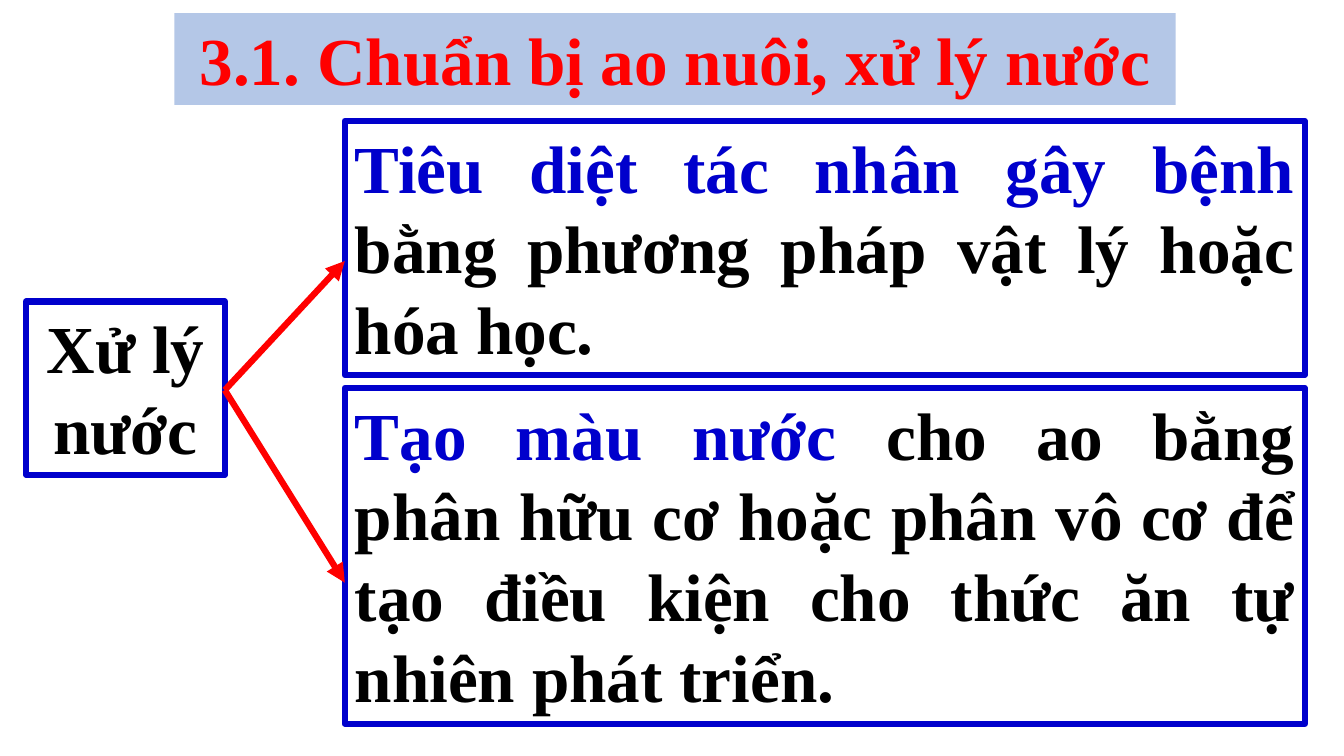
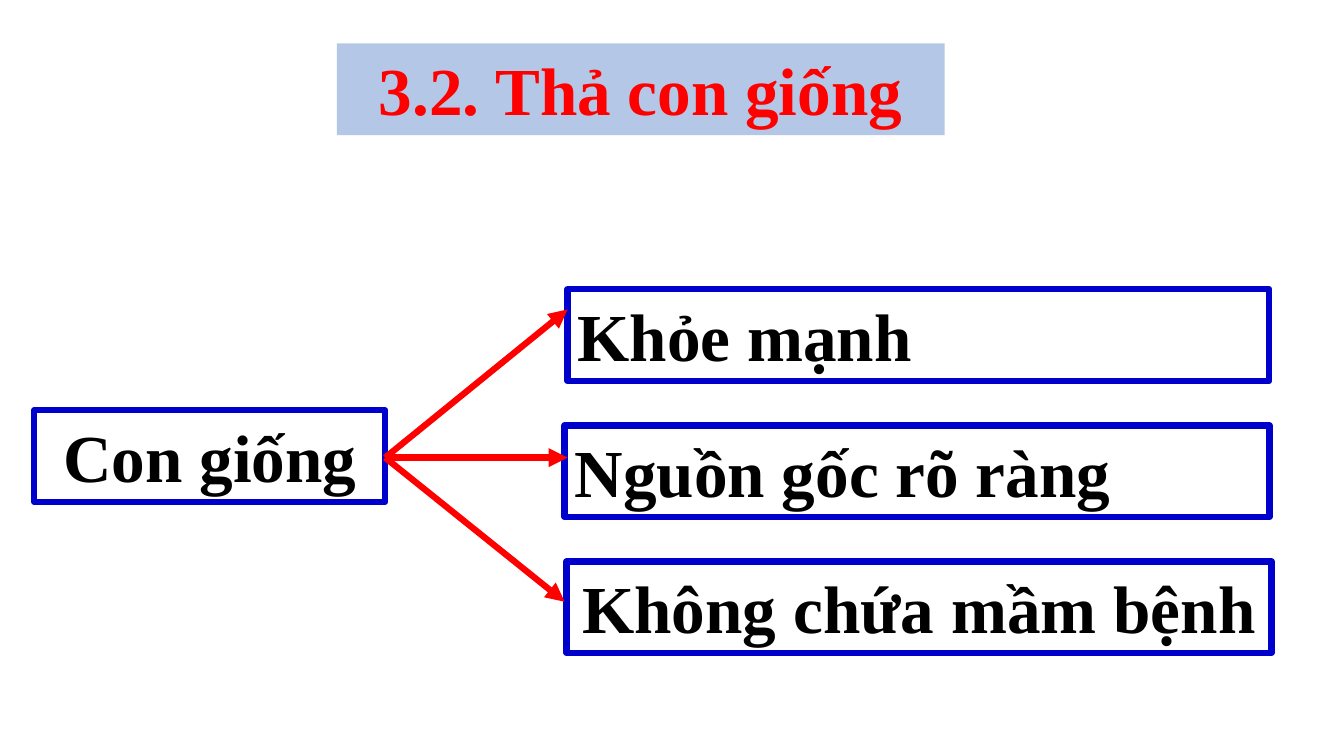
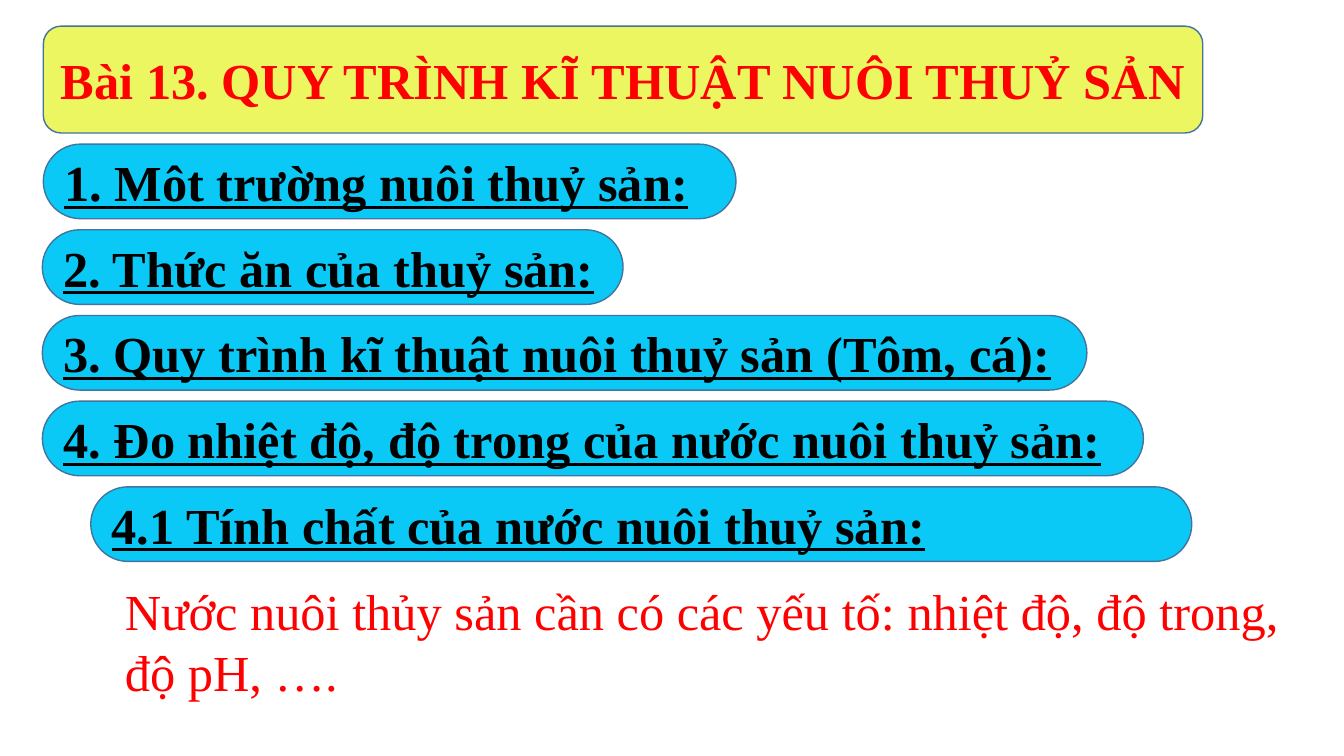
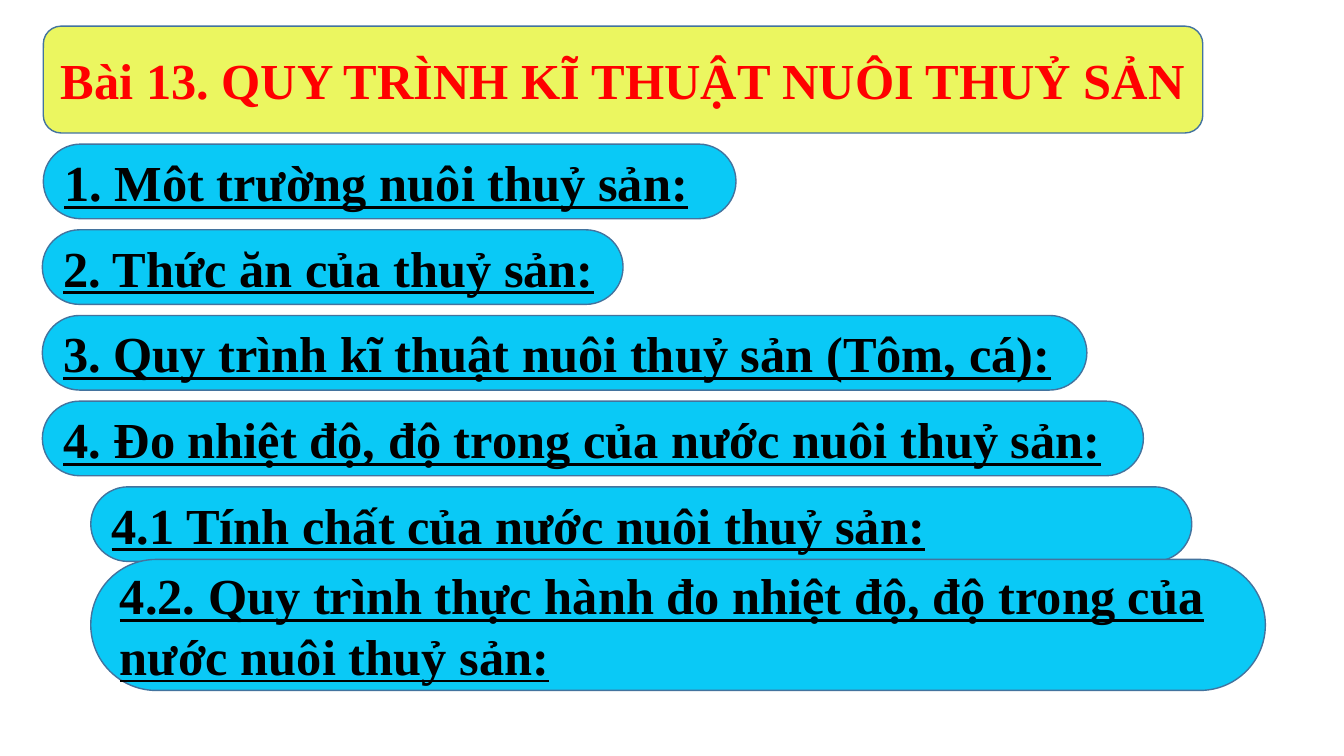
import pptx
import pptx.dml.color
import pptx.enum.shapes
import pptx.enum.text
import pptx.oxml
import pptx.oxml.ns
import pptx.util
from dataclasses import dataclass

Inches = pptx.util.Inches
Pt = pptx.util.Pt
ALIGN = pptx.enum.text.PP_ALIGN
ANCHOR = pptx.enum.text.MSO_ANCHOR
AUTO_SIZE = pptx.enum.text.MSO_AUTO_SIZE
SHAPE = pptx.enum.shapes.MSO_SHAPE


@dataclass(frozen=True)
class Theme:
    font: str = "Times New Roman"
    large: int = 48
    medium: int = 36
    box_line: float = 4.5
    thin_line: float = 1
    red: str = "FF0000"
    black: str = "000000"
    blue: str = "0000CC"
    title_fill: str = "B4C7E7"
    lesson_fill: str = "EBF660"
    chip_fill: str = "0AC9F6"
    chip_line: str = "43739E"


THEME = Theme()

# Lesson outline: text, left, width
LESSON_TITLE = "Bài 13. QUY TRÌNH KĨ THUẬT NUÔI THUỶ SẢN"
OUTLINE = [
    ("1. Môt trường nuôi thuỷ sản:", 0.43, 6.87),
    ("2. Thức ăn của thuỷ sản:", 0.42, 5.76),
    ("3. Quy trình kĩ thuật nuôi thuỷ sản (Tôm, cá):", 0.42, 10.36),
    ("4. Đo nhiệt độ, độ trong của nước nuôi thuỷ sản:", 0.42, 10.92),
    ("4.1 Tính chất của nước nuôi thuỷ sản:", 0.9, 10.92),
]
OUTLINE_TOP, OUTLINE_PITCH, CHIP_HEIGHT = 1.43, 0.85, 0.74
BOX_HEIGHT = 0.91


# Shared helpers
def rgb(value):
    return pptx.dml.color.RGBColor.from_string(value)


def apply_format(target, values):
    for name, value in values.items():
        setattr(target, name, value)


def set_fill(shape, color):
    if color is None:
        shape.fill.background()
    else:
        shape.fill.solid()
        shape.fill.fore_color.rgb = rgb(color)


def set_line(line, color, width):
    line.color.rgb = rgb(color)
    line.width = Pt(width)


def write_text(shape, runs, size, align=ALIGN.LEFT, anchor=ANCHOR.TOP,
               grow=True, bold=True, underline=False):
    """Fill a shape with one paragraph of (text, color) runs."""
    frame = shape.text_frame
    apply_format(frame, {
        "word_wrap": True,
        "vertical_anchor": anchor,
        "auto_size": AUTO_SIZE.SHAPE_TO_FIT_TEXT if grow else AUTO_SIZE.NONE,
    })
    paragraph = frame.paragraphs[0]
    paragraph.alignment = align
    for text, color in runs:
        run = paragraph.add_run()
        run.text = text
        apply_format(run.font, {"name": THEME.font, "size": Pt(size),
                                "bold": bold, "underline": underline})
        run.font.color.rgb = rgb(color)


# Kinds of element
def add_slide(presentation):
    return presentation.slides.add_slide(presentation.slide_layouts[5])


def add_title(slide, text, place, size, fill=None, **text_format):
    title = slide.shapes.title
    names = ("left", "top", "width", "height")
    apply_format(title, dict(zip(names, map(Inches, place))))
    set_fill(title, fill)
    write_text(title, [(text, THEME.red)], size, ALIGN.CENTER, **text_format)


def add_panel(slide, kind, place, fill, line, width):
    shape = slide.shapes.add_shape(kind, *map(Inches, place))
    shape.shadow.inherit = False
    set_fill(shape, fill)
    set_line(shape.line, line, width)
    return shape


def add_box(slide, place, runs, align=ALIGN.LEFT):
    box = add_panel(slide, SHAPE.RECTANGLE, place, None, THEME.blue, THEME.box_line)
    write_text(box, runs, THEME.large, align)


def add_arrow(slide, start, end):
    arrow = slide.shapes.add_connector(
        pptx.enum.shapes.MSO_CONNECTOR.STRAIGHT, *map(Inches, start + end))
    set_line(arrow.line, THEME.red, THEME.box_line)
    namespace = pptx.oxml.ns.nsdecls("a")
    properties = arrow.element.spPr
    properties.find(pptx.oxml.ns.qn("a:ln")).append(
        pptx.oxml.parse_xml(f'<a:tailEnd {namespace} type="triangle"/>'))
    properties.append(pptx.oxml.parse_xml(f"<a:effectLst {namespace}/>"))


def add_chip(slide, text, place):
    chip = add_panel(slide, SHAPE.ROUNDED_RECTANGLE, place,
                     THEME.chip_fill, THEME.chip_line, THEME.thin_line)
    chip.adjustments[0] = 0.5
    write_text(chip, [(text, THEME.black)], THEME.medium,
               anchor=ANCHOR.MIDDLE, grow=False, underline=True)


def add_outline_slide(presentation):
    """Add a slide with the lesson banner and the section chips."""
    slide = add_slide(presentation)
    banner = (0.43, 0.26, 11.5, 1.06)
    panel = add_panel(slide, SHAPE.ROUNDED_RECTANGLE, banner,
                      THEME.lesson_fill, THEME.chip_line, THEME.thin_line)
    slide.shapes.title.element.addprevious(panel.element)
    add_title(slide, LESSON_TITLE, banner, THEME.medium,
              anchor=ANCHOR.MIDDLE, grow=False)
    for row, (text, left, width) in enumerate(OUTLINE):
        top = OUTLINE_TOP + row * OUTLINE_PITCH
        add_chip(slide, text, (left, top, width, CHIP_HEIGHT))
    return slide


# Slides
def build_water_slide(presentation):
    slide = add_slide(presentation)
    add_title(slide, "3.1. Chuẩn bị ao nuôi, xử lý nước",
              (1.73, 0.13, 9.93, BOX_HEIGHT), THEME.large, THEME.title_fill)
    add_box(slide, (0.26, 2.99, 1.97, 1.72), [("Xử lý nước", THEME.black)], ALIGN.CENTER)
    measures = [
        (1.2, 2.52, 2.59, "Tiêu diệt tác nhân gây bệnh ",
         "bằng phương pháp vật lý hoặc hóa học."),
        (3.85, 3.33, 5.78, "Tạo màu nước ",
         "cho ao bằng phân hữu cơ hoặc phân vô cơ để tạo điều kiện "
         "cho thức ăn tự nhiên phát triển."),
    ]
    for top, height, arrow_end, key_phrase, detail in measures:
        add_box(slide, (3.42, top, 9.52, height),
                [(key_phrase, THEME.blue), (detail, THEME.black)], ALIGN.JUSTIFY)
        add_arrow(slide, (2.23, 3.87), (3.42, arrow_end))


def build_stock_slide(presentation):
    slide = add_slide(presentation)
    add_title(slide, "3.2. Thả con giống",
              (3.34, 0.43, 6.03, BOX_HEIGHT), THEME.large, THEME.title_fill)
    add_box(slide, (0.34, 4.07, 3.48, BOX_HEIGHT), [("Con giống", THEME.black)], ALIGN.CENTER)
    criteria = [
        ("Khỏe mạnh", 5.63, 6.96, ALIGN.LEFT, (5.63, 3.07)),
        ("Nguồn gốc rõ ràng", 5.6, 6.99, ALIGN.LEFT, (5.63, 4.54)),
        ("Không chứa mầm bệnh", 5.62, 6.99, ALIGN.CENTER, (5.6, 5.97)),
    ]
    for row, (text, left, width, align, arrow_end) in enumerate(criteria):
        add_box(slide, (left, 2.87 + row * 1.35, width, BOX_HEIGHT),
                [(text, THEME.black)], align)
        add_arrow(slide, (3.82, 4.54), arrow_end)


def build_properties_slide(presentation):
    slide = add_outline_slide(presentation)
    note = slide.shapes.add_textbox(*map(Inches, (1.14, 5.71, 11.73, 1.31)))
    write_text(note, [("Nước nuôi thủy sản cần có các yếu tố: nhiệt độ, độ trong, "
                       "độ pH, ….", THEME.red)], THEME.medium, bold=False)


def build_practice_slide(presentation):
    slide = add_outline_slide(presentation)
    add_chip(slide, "4.2. Quy trình thực hành đo nhiệt độ, độ trong của nước nuôi thuỷ sản:",
             (0.9, 5.55, 11.65, 1.3))


def main():
    presentation = pptx.Presentation()
    presentation.slide_width = Inches(13.33)
    presentation.slide_height = Inches(7.5)
    build_water_slide(presentation)
    build_stock_slide(presentation)
    build_properties_slide(presentation)
    build_practice_slide(presentation)
    presentation.save("out.pptx")


if __name__ == "__main__":
    main()
